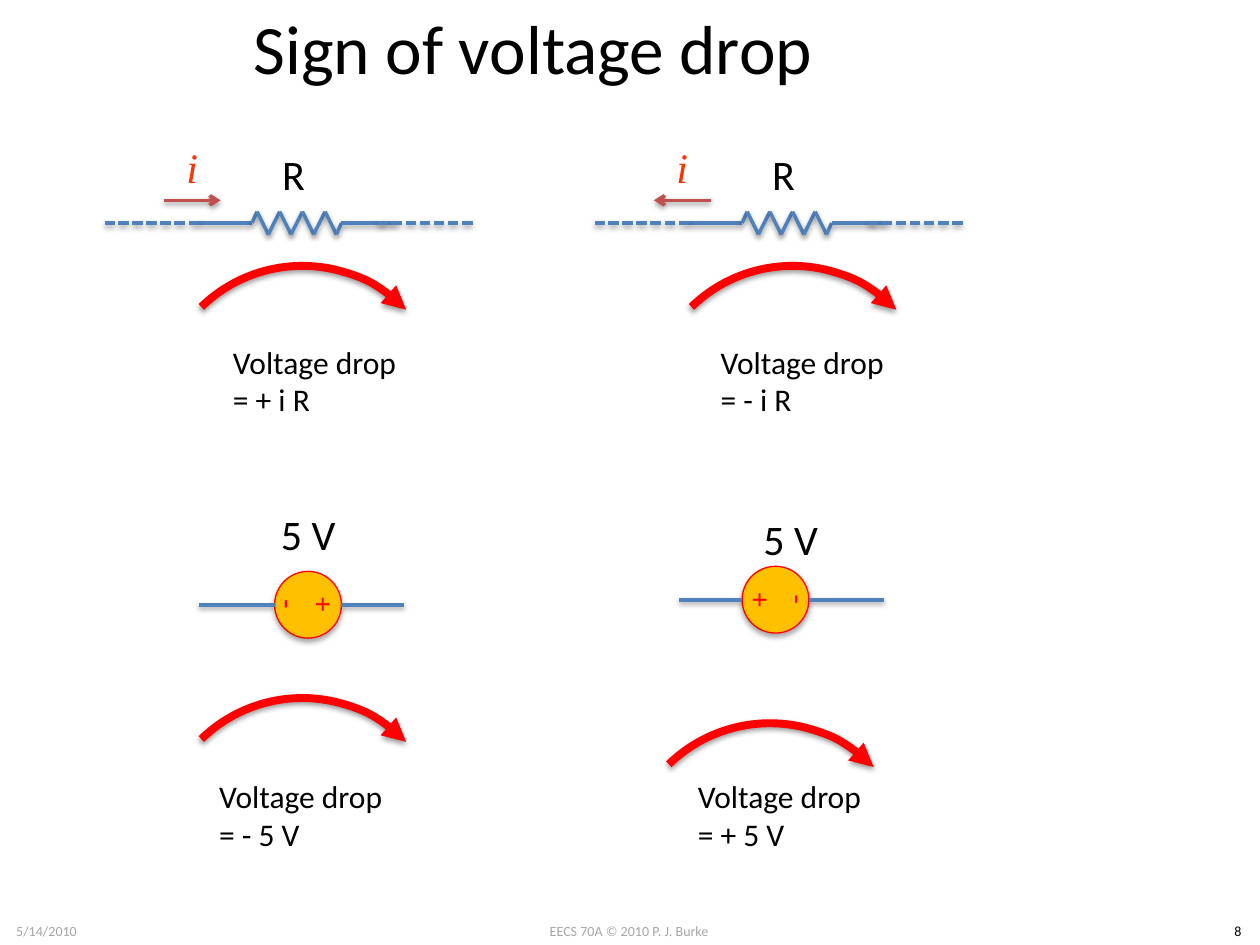
from lxml import etree
from pptx import Presentation
from pptx.dml.color import RGBColor
from pptx.enum import dml, shapes, text
from pptx.oxml import parse_xml
from pptx.oxml.ns import nsdecls, qn
from pptx.util import Inches, Pt

BLUE, RED, BLACK, GREY = "4F81BD", "FF0000", "000000", "A6A6A6"


def color(value):
    """Turn a hex string into a colour."""
    return RGBColor.from_string(value)


def add_shadow(shape, alpha=38, distance=20000):
    """Give a shape or connector a soft shadow straight below it."""
    properties = shape._element.spPr
    properties.append(parse_xml(
        f'<a:effectLst {nsdecls("a")}><a:outerShdw blurRad="40000" dist="{distance}" '
        f'dir="5400000" rotWithShape="0"><a:srgbClr val="000000">'
        f'<a:alpha val="{alpha * 1000}"/></a:srgbClr></a:outerShdw></a:effectLst>'))


def style_line(shape, line_color, width, head=None, dashed=False):
    """Set the stroke, its dash and the arrowhead at its end."""
    shape.line.color.rgb = color(line_color)
    shape.line.width = Pt(width)
    if dashed:
        shape.line.dash_style = dml.MSO_LINE.SQUARE_DOT
    if head:
        line = shape._element.spPr.find(qn("a:ln"))
        etree.SubElement(line, qn("a:tailEnd"), type=head)


def format_text(frame, content, size, font="Calibri", font_color=BLACK, italic=False,
                align=text.PP_ALIGN.LEFT, anchor=text.MSO_ANCHOR.TOP, wrap=True):
    """Fill a text frame with formatted paragraphs, one for each line."""
    frame.text = content
    frame.word_wrap = wrap
    frame.vertical_anchor = anchor
    for paragraph in frame.paragraphs:
        paragraph.alignment = align
        for run in paragraph.runs:
            run.font.size = Pt(size)
            run.font.name = font
            run.font.italic = italic
            run.font.color.rgb = color(font_color)


def add_text(slide, content, left, top, width, height, size, **options):
    """Add a text box and return it."""
    box = slide.shapes.add_textbox(*map(Inches, (left, top, width, height)))
    format_text(box.text_frame, content, size, **options)
    return box


def add_line(slide, start, end, line_color=BLUE, **options):
    """Add a straight line with a shadow between two points."""
    line = slide.shapes.add_connector(shapes.MSO_CONNECTOR.STRAIGHT,
                                      *map(Inches, (*start, *end)))
    style_line(line, line_color, 2, **options)
    add_shadow(line)


def add_title(slide, left, top, width, height):
    """Place the title in its placeholder."""
    title = slide.shapes.title
    title.left, title.top, title.width, title.height = map(
        Inches, (left, top, width, height))
    format_text(title.text_frame, "Sign of voltage drop", 39.6,
                align=text.PP_ALIGN.CENTER, anchor=text.MSO_ANCHOR.MIDDLE)


def add_footer(slide, top):
    """Place the credit, date and slide number along the bottom."""
    for content, left, width, font_color in (
            ("EECS 70A © 2010 P. J. Burke", 3.83, 2.33, GREY),
            ("5/14/2010", 0, 0.74, GREY),
            ("8", 9.65, 0.35, BLACK)):
        add_text(slide, content, left, top, width, 0.24, 8, font_color=font_color,
                 align=text.PP_ALIGN.CENTER)


def add_resistor(slide, left, middle, current_right):
    """Draw a resistor with its leads, label and current arrow."""
    peaks = [(left + 1.21 + 0.09 * index, middle + (0.09 if index % 2 else -0.09))
             for index in range(8)]
    points = [(left + 0.75, middle), (left + 1.17, middle), *peaks,
              (left + 1.88, middle), (left + 2.3, middle)]
    for start, end in zip(points, points[1:]):
        add_line(slide, start, end)
    for offset in (0, 2.17):
        add_line(slide, (left + offset + 0.75, middle), (left + offset, middle),
                 dashed=True)
    add_text(slide, "R", left + 1.31, middle - 0.64, 0.44, 0.5, 24)
    ends = [(left + 0.47, middle - 0.18), (left + 0.92, middle - 0.18)]
    start, end = ends if current_right else reversed(ends)
    add_line(slide, start, end, "C0504D", head="arrow")
    add_text(slide, "i", left + 0.31, middle - 0.75, 0.77, 0.61, 24,
             font="Times New Roman", font_color="FF3300", italic=True,
             align=text.PP_ALIGN.CENTER, anchor=text.MSO_ANCHOR.MIDDLE)


def add_source(slide, left, middle, lead, signs, rotation):
    """Draw a voltage source with its two leads and polarity signs."""
    size = 0.53
    circle_left, circle_top = left + lead, middle - size / 2
    circle = slide.shapes.add_shape(
        shapes.MSO_SHAPE.OVAL, *map(Inches, (circle_left, circle_top, size, size)))
    circle.fill.solid()
    circle.fill.fore_color.rgb = color("FFC000")
    style_line(circle, RED, 0.75)
    add_shadow(circle, 35, 23000)
    for sign, offset in zip(signs, (-0.01, 0.27)):
        box = add_text(slide, sign, circle_left + offset, circle_top + 0.1, 0.26, 0.33,
                       16.6 if sign == "+" else 18, font_color=RED,
                       align=text.PP_ALIGN.CENTER, anchor=text.MSO_ANCHOR.MIDDLE)
        frame = box.text_frame
        frame.margin_left = frame.margin_right = 0
        box.rotation = rotation
    add_line(slide, (left, middle), (circle_left, middle))
    add_line(slide, (circle_left + size, middle), (left + 1.63, middle))


def add_drop(slide, left, top, caption, caption_left, caption_top):
    """Draw the curved voltage arrow with its caption."""
    arc = slide.shapes.add_shape(shapes.MSO_SHAPE.ARC,
                                 *map(Inches, (left, top, 2.3, 2.3)))
    arc.rotation = 315.8
    arc.fill.background()
    style_line(arc, RED, 4.5, head="triangle")
    add_shadow(arc)
    add_text(slide, f"Voltage drop\n{caption}", caption_left, caption_top, 1.51, 0.71,
             18, wrap=False)


def main():
    """Build and save the slide."""
    presentation = Presentation()
    presentation.slide_width, presentation.slide_height = Inches(10), Inches(7.5)
    slide = presentation.slides.add_slide(presentation.slide_layouts[5])
    add_title(slide, 0.83, 0, 6.8, 0.75)
    add_footer(slide, 7.27)
    add_resistor(slide, 0.83, 1.77, True)
    add_resistor(slide, 4.72, 1.77, False)
    add_source(slide, 1.58, 4.8, 0.6, "-+", 90)
    add_source(slide, 5.39, 4.76, 0.5, "+-", 270)
    for left, top in ((2.13, 3.99), (5.96, 4.03)):
        add_text(slide, "5 V", left, top, 0.72, 0.5, 24)
    for drop in ((1.25, 2.11, "= + i R", 1.75, 2.67),
                 (5.14, 2.11, "= - i R", 5.62, 2.67),
                 (1.25, 5.54, "= - 5 V", 1.64, 6.12),
                 (4.96, 5.74, "= + 5 V", 5.44, 6.12)):
        add_drop(slide, *drop)
    presentation.save("out.pptx")


if __name__ == "__main__":
    main()
